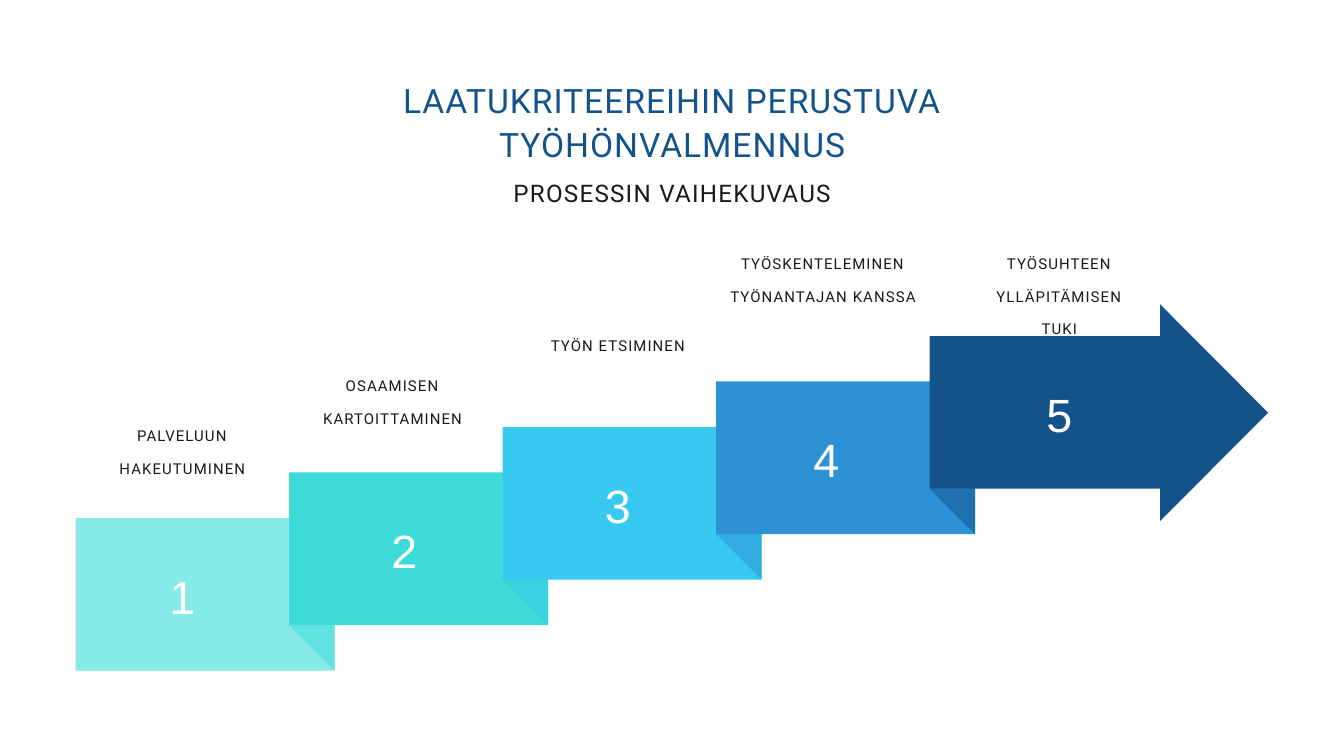
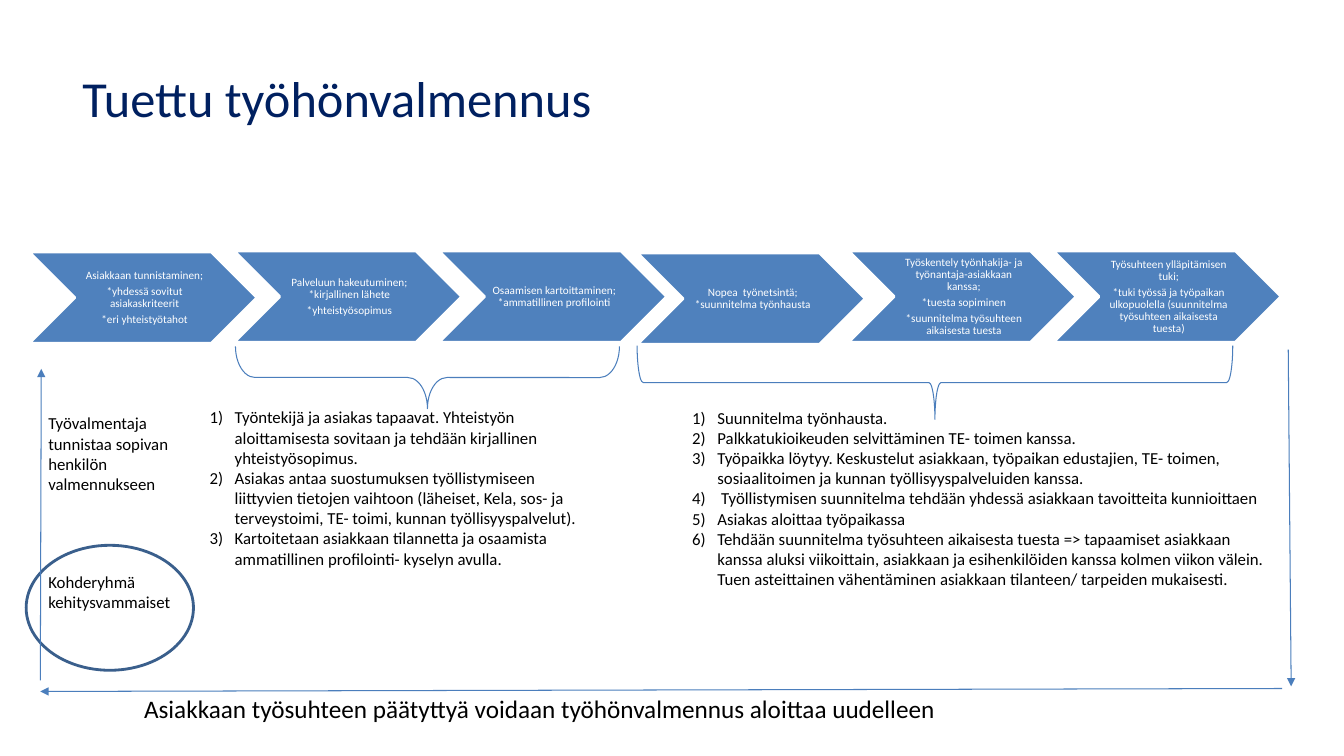
from dataclasses import dataclass
from typing import Any

import pptx
import pptx.dml.color
import pptx.enum.shapes
import pptx.enum.text
import pptx.oxml
import pptx.oxml.ns
import pptx.util
from lxml import etree

Pt = pptx.util.Pt
Shape = pptx.enum.shapes.MSO_SHAPE
Align = pptx.enum.text.PP_ALIGN
Anchor = pptx.enum.text.MSO_ANCHOR
qn = pptx.oxml.ns.qn

WHITE, BLACK, INK = "FFFFFF", "000000", "191919"
NAVY, BLUE, RULE, RING, TITLE = "13538A", "4F81BD", "4B7EBC", "3A5F8C", "002060"


@dataclass(frozen=True)
class Box:
    left: float
    top: float
    width: float
    height: float

    def pts(self) -> list[Any]:
        return [Pt(v) for v in (self.left, self.top, self.width, self.height)]


@dataclass(frozen=True)
class Style:
    font: str
    size: float
    color: str
    track: float = 0
    pitch: float | None = None
    after: float | None = None
    align: Any = None
    count: bool = False
    pad: tuple[float, float, float, float] = (7.2, 3.6, 7.2, 3.6)


@dataclass(frozen=True)
class Step:
    color: str
    num: float
    text: str
    label: Box


@dataclass(frozen=True)
class Phase:
    lines: list[str]
    dx: float = 0
    dy: float = 0


@dataclass(frozen=True)
class Note:
    box: Box
    lines: list[str]
    style: Style


FLAT = (0, 0, 0, 0)
HEAD = Style("Roboto", 24, NAVY, 0.7, 31.4, align=Align.CENTER, pad=FLAT)
SUB = Style("Roboto", 17.3, INK, 0.9, 24.3, align=Align.CENTER, pad=FLAT)
LABEL = Style("Roboto", 10.7, INK, 0.8, 23.3, align=Align.CENTER, pad=FLAT)
DIGIT = Style("Arial", 33.3, WHITE, 1.7, 46.7, align=Align.CENTER, pad=FLAT)
PHASE = Style("Calibri", 8, WHITE, pitch=0.9, after=2.8, align=Align.CENTER,
              pad=(2.88, 0.72, 0.72, 0.72))
BODY = Style("Calibri", 12, BLACK)
LIST = Style("Calibri", 12, BLACK, count=True)

STEPS = [
    Step("86EAE9", 106.6, "PALVELUUN HAKEUTUMINEN", Box(80.6, 294.5, 99.4, 44)),
    Step("3EDAD8", 265, "OSAAMISEN KARTOITTAMINEN", Box(222.5, 258.5, 116, 44)),
    Step("37C9EF", 417.6, "TYÖN ETSIMINEN", Box(391.7, 229.7, 99.4, 20)),
    Step("2C92D5", 566.6, "TYÖSKENTELEMINEN TYÖNANTAJAN KANSSA", Box(512, 171.4, 152, 44)),
    Step(NAVY, 733, "TYÖSUHTEEN YLLÄPITÄMISEN TUKI", Box(707, 171.4, 99.4, 67)),
]

PHASES = [
    Phase(["Asiakkaan tunnistaminen;", "*yhdessä sovitut asiakaskriteerit",
           "*eri yhteistyötahot"], dy=0.7),
    Phase(["Palveluun hakeutuminen; *kirjallinen lähete", "*yhteistyösopimus"]),
    Phase(["Osaamisen kartoittaminen; *ammatillinen profilointi"]),
    Phase(["Nopea  työnetsintä; *suunnitelma työnhausta"], dx=-4.5, dy=1.4),
    Phase(["Työskentely työnhakija- ja työnantaja-asiakkaan kanssa;",
           "*tuesta sopiminen", "*suunnitelma työsuhteen aikaisesta tuesta"]),
    Phase(["Työsuhteen ylläpitämisen tuki;",
           "*tuki työssä ja työpaikan ulkopuolella (suunnitelma työsuhteen "
           "aikaisesta tuesta)"]),
]

NOTES = [
    Note(Box(51.8, 44.6, 718.6, 51), ["Tuettu työhönvalmennus"],
         Style("Calibri", 36, TITLE)),
    Note(Box(27.4, 404.6, 126.7, 47.5), ["Kohderyhmä kehitysvammaiset"], BODY),
    Note(Box(142.6, 287.3, 280.8, 124), [
        "Työntekijä ja asiakas tapaavat. Yhteistyön aloittamisesta sovitaan ja "
        "tehdään kirjallinen yhteistyösopimus.",
        "Asiakas antaa suostumuksen työllistymiseen liittyvien tietojen vaihtoon "
        "(läheiset, Kela, sos- ja terveystoimi, TE- toimi, kunnan "
        "työllisyyspalvelut).",
        "Kartoitetaan asiakkaan tilannetta ja osaamista ammatillinen profilointi- "
        "kyselyn avulla.",
    ], LIST),
    Note(Box(27.4, 291.6, 128.9, 65.5),
         ["Työvalmentaja tunnistaa sopivan henkilön valmennukseen"], BODY),
    Note(Box(487.4, 287.6, 424, 138), [
        "Suunnitelma työnhausta.",
        "Palkkatukioikeuden selvittäminen TE- toimen kanssa.",
        "Työpaikka löytyy. Keskustelut asiakkaan, työpaikan edustajien, TE- toimen, "
        "sosiaalitoimen ja kunnan työllisyyspalveluiden kanssa.",
        " Työllistymisen suunnitelma tehdään yhdessä asiakkaan tavoitteita "
        "kunnioittaen",
        "Asiakas aloittaa työpaikassa",
        "Tehdään suunnitelma työsuhteen aikaisesta tuesta => tapaamiset asiakkaan "
        "kanssa aluksi viikoittain, asiakkaan ja esihenkilöiden kanssa kolmen viikon "
        "välein. Tuen asteittainen vähentäminen asiakkaan tilanteen/ tarpeiden "
        "mukaisesti.",
    ], LIST),
    Note(Box(95.8, 491.8, 598.3, 29),
         ["Asiakkaan työsuhteen päätyttyä voidaan työhönvalmennus aloittaa uudelleen"],
         Style("Calibri", 18, BLACK)),
]

BRACES = [(Box(641.5, 60.5, 52.6, 425.5), 0.083),
          (Box(283, 132.5, 44.6, 274.3), 0.315)]
ARROWS = [((920.2, 249.8), (922.3, 490.3)),
          ((28.8, 486), (29.5, 263.5)),
          ((915.8, 491.8), (28.8, 493.9))]


def rgb(code: str) -> Any:
    return pptx.dml.color.RGBColor.from_string(code)


def paint(shape: Any, fill: str | None, line: str | None = None,
          width: float = 0, alpha: int = 100) -> None:
    shape.shadow.inherit = False
    if fill:
        shape.fill.solid()
        shape.fill.fore_color.rgb = rgb(fill)
        if alpha < 100:
            tone = shape.fill._xPr.find(".//" + qn("a:srgbClr"))
            etree.SubElement(tone, qn("a:alpha"), val=str(alpha * 1000))
    else:
        shape.fill.background()
    if line:
        shape.line.color.rgb = rgb(line)
        shape.line.width = Pt(width)
    else:
        shape.line.fill.background()


def write(shape: Any, lines: list[str], style: Style, anchor: Any = Anchor.TOP) -> None:
    frame = shape.text_frame
    frame.word_wrap = True
    frame.vertical_anchor = anchor
    (frame.margin_left, frame.margin_top,
     frame.margin_right, frame.margin_bottom) = map(Pt, style.pad)
    frame.text = "\n".join(lines)
    for para in frame.paragraphs:
        para.alignment = style.align or Align.LEFT
        if style.pitch:
            para.line_spacing = Pt(style.pitch) if style.pitch > 5 else style.pitch
        if style.after:
            para.space_after = Pt(style.after)
        if style.count:
            props = para._p.get_or_add_pPr()
            props.set("marL", str(Pt(18)))
            props.set("indent", str(-Pt(18)))
            etree.SubElement(props, qn("a:buFont"), typeface="+mj-lt")
            etree.SubElement(props, qn("a:buAutoNum"), type="arabicParenR")
        for run in para.runs:
            run.font.name = style.font
            run.font.size = Pt(style.size)
            run.font.color.rgb = rgb(style.color)
            if style.track:
                run._r.get_or_add_rPr().set("spc", str(round(style.track * 100)))


def text(slide: Any, box: Box, lines: list[str], style: Style) -> None:
    write(slide.shapes.add_textbox(*box.pts()), lines, style)


def form(slide: Any, kind: Any, box: Box) -> Any:
    return slide.shapes.add_shape(kind, *box.pts())


def wedge(slide: Any, dots: list[tuple[float, float]], color: str, alpha: int = 100) -> None:
    """Draw a filled triangle through three points."""
    first, *rest = [(Pt(x), Pt(y)) for x, y in dots]
    path = slide.shapes.build_freeform(*first)
    path.add_line_segments(rest, close=True)
    paint(path.convert_to_shape(), color, alpha=alpha)


def arrow(slide: Any, start: tuple[float, float], end: tuple[float, float]) -> None:
    line = slide.shapes.add_connector(
        pptx.enum.shapes.MSO_CONNECTOR.STRAIGHT, *map(Pt, start + end))
    line.line.color.rgb = rgb(RULE)
    line.line.width = Pt(0.75)
    etree.SubElement(line.line._get_or_add_ln(), qn("a:tailEnd"), type="triangle")
    etree.SubElement(line._element.spPr, qn("a:effectLst"))


def stairs(slide: Any) -> None:
    wide, high, fold, pitch = 185, 109, 32.5, 152.5
    for i, step in enumerate(STEPS):
        left, top = 54 + i * pitch, 370 - i * fold
        base = top + high
        paint(form(slide, Shape.RECTANGLE, Box(left, top, wide, high)), step.color)
        if i:
            wedge(slide, [(left, base), (left + fold, base), (left + fold, base + fold)],
                  step.color, 50)
        text(slide, Box(step.num, top + 28.8, 47.5, 45.4), [str(i + 1)], DIGIT)
    wedge(slide, [(828.7, 217.4), (905.8, 294.8), (828.7, 372.2)], NAVY)
    for step in STEPS:
        text(slide, step.label, [step.text], LABEL)
    text(slide, Box(186.5, 123.8, 587.5, 22.3), ["PROSESSIN VAIHEKUVAUS"], SUB)
    text(slide, Box(186.5, 54.7, 587.5, 63.4),
         ["LAATUKRITEEREIHIN PERUSTUVA TYÖHÖNVALMENNUS"], HEAD)


def chain(slide: Any) -> None:
    for i, phase in enumerate(PHASES):
        box = Box(20.9 + i * 146.3 + phase.dx, 179.3 + phase.dy, 162.7, 65.2)
        link = form(slide, Shape.CHEVRON, box)
        paint(link, BLUE, WHITE, 2)
        write(link, phase.lines, PHASE, Anchor.MIDDLE)
    for note in NOTES:
        text(slide, note.box, note.lines, note.style)
    paint(form(slide, Shape.OVAL, Box(18.7, 389.5, 119.5, 89.3)), None, RING, 2)
    for box, bend in BRACES:
        brace = form(slide, Shape.RIGHT_BRACE, box)
        brace.rotation = 90
        brace.adjustments[0] = bend
        paint(brace, None, RULE, 0.75)
    for start, end in ARROWS:
        arrow(slide, start, end)


def main() -> None:
    deck = pptx.Presentation()
    deck.slide_width, deck.slide_height = Pt(960), Pt(540)
    for draw in (stairs, chain):
        draw(deck.slides.add_slide(deck.slide_layouts[6]))
    deck.save("out.pptx")


if __name__ == "__main__":
    main()
